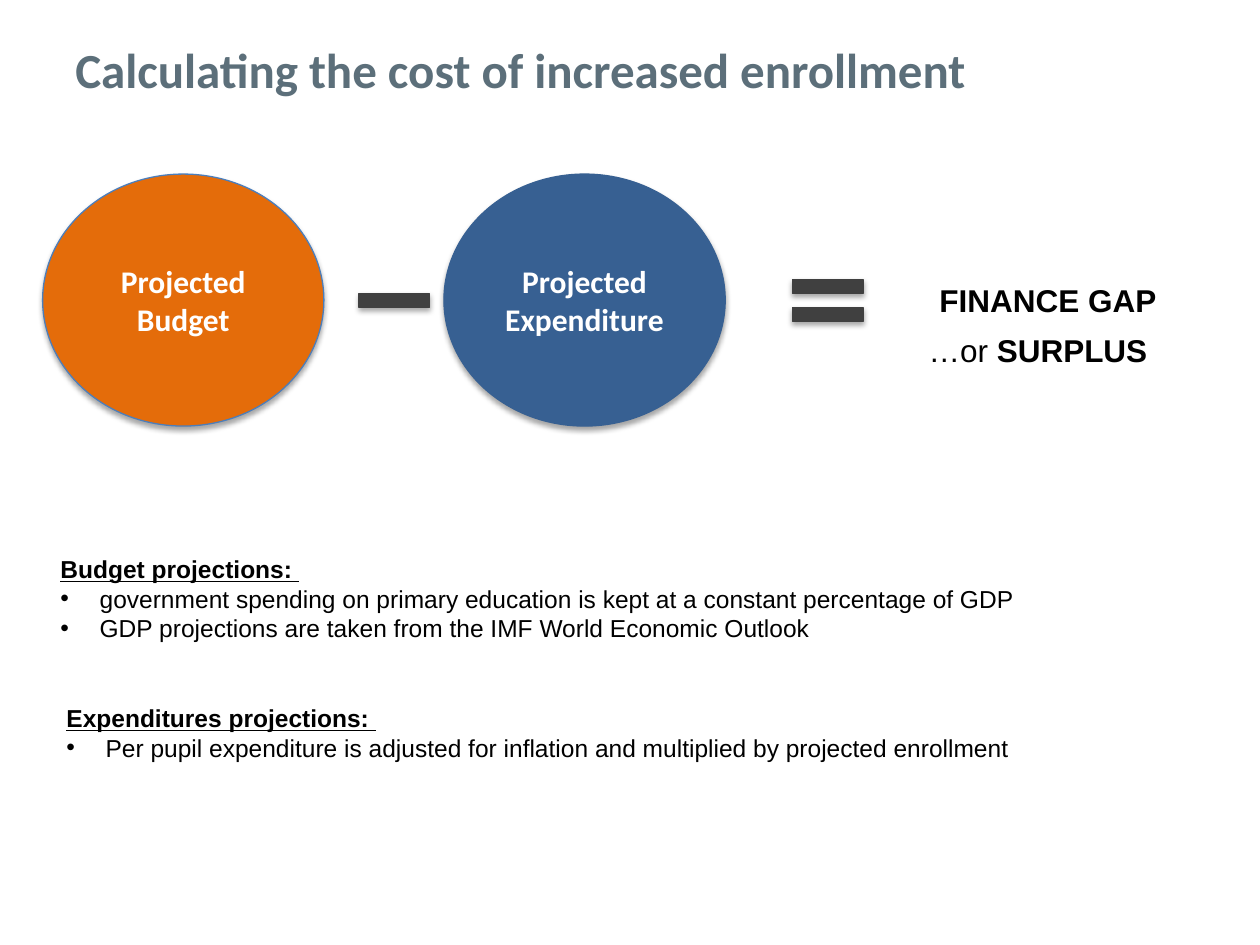
from lxml.etree import SubElement
from pptx import Presentation
from pptx.dml.color import RGBColor
from pptx.enum.shapes import MSO_SHAPE
from pptx.enum.text import MSO_ANCHOR, PP_ALIGN
from pptx.oxml.ns import qn
from pptx.util import Cm, Pt

COLORS = {"title": "5C6F7A", "orange": "E46C0A", "orange_line": "4B7EBC",
          "blue": "376092", "sign": "404040", "white": "FFFFFF", "black": "000000"}

# Positions and sizes in cm
TITLE = "Calculating the cost of increased enrollment"
TERMS = [  # text, left, fill, line
    ("Projected Budget", 0.86, "orange", "orange_line"),
    ("Projected Expenditure", 8.95, "blue", "blue"),
]
TERM_TOP, TERM_W, TERM_H = 3.51, 5.67, 5.08
BAR_W, BAR_H = 1.42, 0.28
MINUS = (7.24, 5.92)
EQUALS_LEFT, EQUALS_TOPS = 15.98, (5.64, 6.2)
RESULTS = [  # left, top, width, runs of (text, bold)
    (18.69, 5.54, 5.33, [("FINANCE GAP", True)]),
    (18.47, 6.55, 5.56, [("…or ", False), ("SURPLUS", True)]),
]
NOTES = [  # left, top, height, heading, bullets
    (0.97, 11.05, 2.06, "Budget projections: ", [
        "government spending on primary education is kept at a constant percentage of GDP",
        "GDP projections are taken from the IMF World Economic Outlook"]),
    (1.09, 14.05, 1.45, "Expenditures projections: ", [
        "Per pupil expenditure is adjusted for inflation and multiplied by projected enrollment"]),
]
NOTE_W, INDENT = 20.12, 0.79


def rgb(name):
    return RGBColor.from_string(COLORS[name])


def style(font, size, color="black", name="Arial", bold=False, underline=False):
    font.name, font.size, font.bold = name, Pt(size), bold
    font.underline = underline
    font.color.rgb = rgb(color)


def add_solid(shapes, kind, left, top, width, height, fill, line):
    """Add a filled shape with a soft shadow below it."""
    sp = shapes.add_shape(kind, Cm(left), Cm(top), Cm(width), Cm(height))
    sp.fill.solid()
    sp.fill.fore_color.rgb = rgb(fill)
    sp.line.color.rgb = rgb(line)
    sp.line.width = Pt(0.75)
    sp.shadow.inherit = False
    effects = sp._element.spPr.find(qn("a:effectLst"))
    shadow = SubElement(effects, qn("a:outerShdw"), blurRad=str(Pt(3.1)),
                        dist=str(Pt(1.8)), dir="5400000", rotWithShape="0")
    color = SubElement(shadow, qn("a:srgbClr"), val=COLORS["black"])
    SubElement(color, qn("a:alpha"), val="35000")
    return sp


def add_bar(shapes, left, top):
    add_solid(shapes, MSO_SHAPE.RECTANGLE, left, top, BAR_W, BAR_H, "sign", "sign")


def add_text(s, left, top, width, height):
    tf = s.shapes.add_textbox(Cm(left), Cm(top), Cm(width), Cm(height)).text_frame
    tf.word_wrap = True
    return tf


def set_bullet(p):
    pPr = p._p.get_or_add_pPr()
    pPr.set("marL", str(Cm(INDENT)))
    pPr.set("indent", str(-Cm(INDENT)))
    SubElement(pPr, qn("a:buFont"), typeface="Arial")
    SubElement(pPr, qn("a:buChar"), char="•")


def main():
    prs = Presentation()
    prs.slide_width, prs.slide_height = Cm(25.4), Cm(19.05)
    s = prs.slides.add_slide(prs.slide_layouts[6])

    tf = add_text(s, 1.27, 0, 24.13, 2.77)
    tf.vertical_anchor = MSO_ANCHOR.MIDDLE
    tf.text = TITLE
    style(tf.paragraphs[0].runs[0].font, 28, "title", "Calibri", True)

    for text, left, fill, line in TERMS:
        sp = add_solid(s.shapes, MSO_SHAPE.OVAL, left, TERM_TOP, TERM_W, TERM_H, fill, line)
        tf = sp.text_frame
        tf.word_wrap = True
        tf.vertical_anchor = MSO_ANCHOR.MIDDLE
        tf.text = text
        p = tf.paragraphs[0]
        p.alignment = PP_ALIGN.CENTER
        style(p.runs[0].font, 18, "white", "Calibri", True)

    add_bar(s.shapes, *MINUS)
    equals = s.shapes.add_group_shape()
    for top in EQUALS_TOPS:
        add_bar(equals.shapes, EQUALS_LEFT, top)

    for left, top, width, runs in RESULTS:
        p = add_text(s, left, top, width, 1.02).paragraphs[0]
        for text, bold in runs:
            r = p.add_run()
            r.text = text
            style(r.font, 18, bold=bold)

    for left, top, height, heading, bullets in NOTES:
        tf = add_text(s, left, top, NOTE_W, height)
        tf.text = heading
        style(tf.paragraphs[0].runs[0].font, 14, bold=True, underline=True)
        for text in bullets:
            p = tf.add_paragraph()
            set_bullet(p)
            p.text = text
            style(p.runs[0].font, 14)

    prs.save("out.pptx")


if __name__ == "__main__":
    main()
